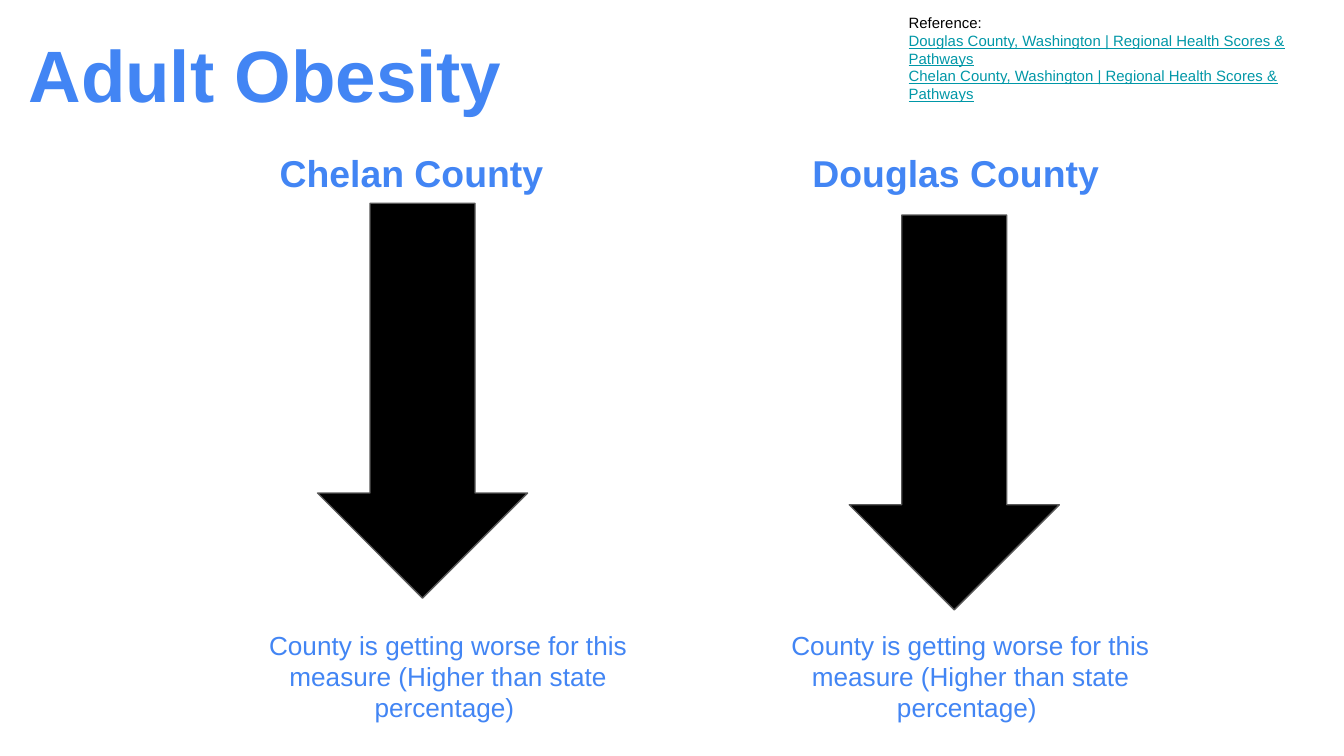
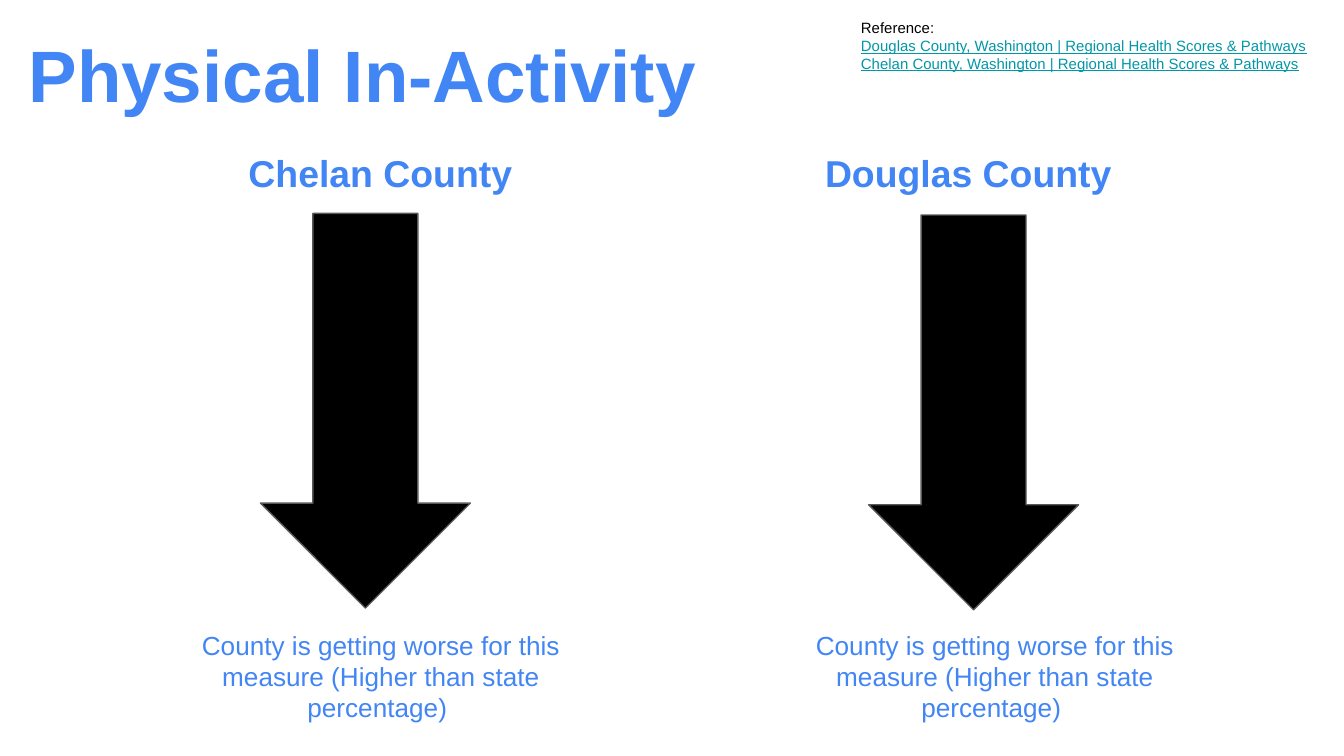
from pptx import Presentation
from pptx.dml.color import RGBColor
from pptx.enum.shapes import MSO_SHAPE
from pptx.enum.text import MSO_ANCHOR, MSO_AUTO_SIZE, PP_ALIGN
from pptx.util import Pt

DOWN_ARROW = MSO_SHAPE.DOWN_ARROW
TOP = MSO_ANCHOR.TOP
GROW = MSO_AUTO_SIZE.SHAPE_TO_FIT_TEXT
LEFT, CENTER = PP_ALIGN.LEFT, PP_ALIGN.CENTER

EMU_PER_PX = 5715
SLIDE_SIZE = (1600, 900)
TITLE_ONLY = 5

BLUE, BLACK, GRAY, TEAL = "4285F4", "000000", "595959", "0097A7"

TITLE = {"size": Pt(39), "bold": True}
HEADING = {"size": Pt(20), "bold": True}
BODY = {"size": Pt(14), "bold": False}
LABEL = {"size": Pt(8), "bold": False}
LINK = {**LABEL, "underline": True}

VERDICT = "County is getting worse for this measure (Higher than state percentage) "
REFERENCES = [
    ("Reference:", LABEL, BLACK),
    ("Douglas County, Washington | Regional Health Scores & Pathways", LINK, TEAL),
    ("Chelan County, Washington | Regional Health Scores & Pathways", LINK, TEAL),
]

COUNTIES = [("Chelan County ", 350, 491), ("Douglas County ", 474, 525)]
HEADING_TOP, HEADING_HEIGHT = 163, 86
VERDICT_TOP, VERDICT_HEIGHT = 733, 146
ARROW_SIZE = (250, 470)
INSETS = (16, 16, 16, 16)

SLIDES = [
    {
        "title": "Adult Obesity",
        "title_width": 819,
        "reference_box": (1066, 0, 525, 141),
        "reference_insets": INSETS,
        "heading_lefts": (315, 907),
        "arrow_corners": ((378, 242), (1011, 256)),
        "verdict_lefts": (288, 893),
    },
    {
        "title": "Physical In-Activity",
        "title_width": 978,
        "reference_box": (782, 0, 803, 106),
        "reference_insets": (243, 22, 0, 16),
        "heading_lefts": (278, 922),
        "arrow_corners": ((310, 254), (1034, 256)),
        "verdict_lefts": (208, 922),
    },
]


def px(*lengths):
    return [length * EMU_PER_PX for length in lengths]


def color(hex_value):
    return RGBColor.from_string(hex_value)


def set_all(target, values):
    for name, value in values.items():
        setattr(target, name, value)


def write(shape, lines, alignment=LEFT, insets=INSETS):
    frame = shape.text_frame
    sides = ("margin_left", "margin_top", "margin_right", "margin_bottom")
    set_all(frame, dict(zip(sides, px(*insets))))
    set_all(frame, {"word_wrap": True, "vertical_anchor": TOP, "auto_size": GROW})
    for index, (text, style, hex_value) in enumerate(lines):
        paragraph = frame.add_paragraph() if index else frame.paragraphs[0]
        paragraph.alignment = alignment
        run = paragraph.add_run()
        run.text = text
        set_all(run.font, {"name": "Arial", **style})
        run.font.color.rgb = color(hex_value)


def add_text(slide, box, lines, alignment=LEFT, insets=INSETS):
    write(slide.shapes.add_textbox(*px(*box)), lines, alignment, insets)


def add_title(slide, text, width):
    title = slide.shapes.title
    places = ("left", "top", "width", "height")
    set_all(title, dict(zip(places, px(18, 19, width, 138))))
    write(title, [(text, TITLE, BLUE)])


def add_arrow(slide, corner):
    arrow = slide.shapes.add_shape(DOWN_ARROW, *px(*corner, *ARROW_SIZE))
    arrow.shadow.inherit = False
    arrow.fill.solid()
    arrow.fill.fore_color.rgb = color(BLACK)
    arrow.line.color.rgb = color(GRAY)
    arrow.line.width = Pt(0.75)


def add_measure_slide(presentation, content):
    slide = presentation.slides.add_slide(presentation.slide_layouts[TITLE_ONLY])
    add_title(slide, content["title"], content["title_width"])
    columns = zip(COUNTIES, content["heading_lefts"],
                  content["arrow_corners"], content["verdict_lefts"])
    for county, heading_left, arrow_corner, verdict_left in columns:
        name, heading_width, verdict_width = county
        add_arrow(slide, arrow_corner)
        add_text(slide, (heading_left, HEADING_TOP, heading_width, HEADING_HEIGHT),
                 [(name, HEADING, BLUE)], CENTER)
        add_text(slide, (verdict_left, VERDICT_TOP, verdict_width, VERDICT_HEIGHT),
                 [(VERDICT, BODY, BLUE)], CENTER)
    add_text(slide, content["reference_box"], REFERENCES,
             insets=content["reference_insets"])


def main():
    presentation = Presentation()
    presentation.slide_width, presentation.slide_height = px(*SLIDE_SIZE)
    for content in SLIDES:
        add_measure_slide(presentation, content)
    presentation.save("out.pptx")


if __name__ == "__main__":
    main()
